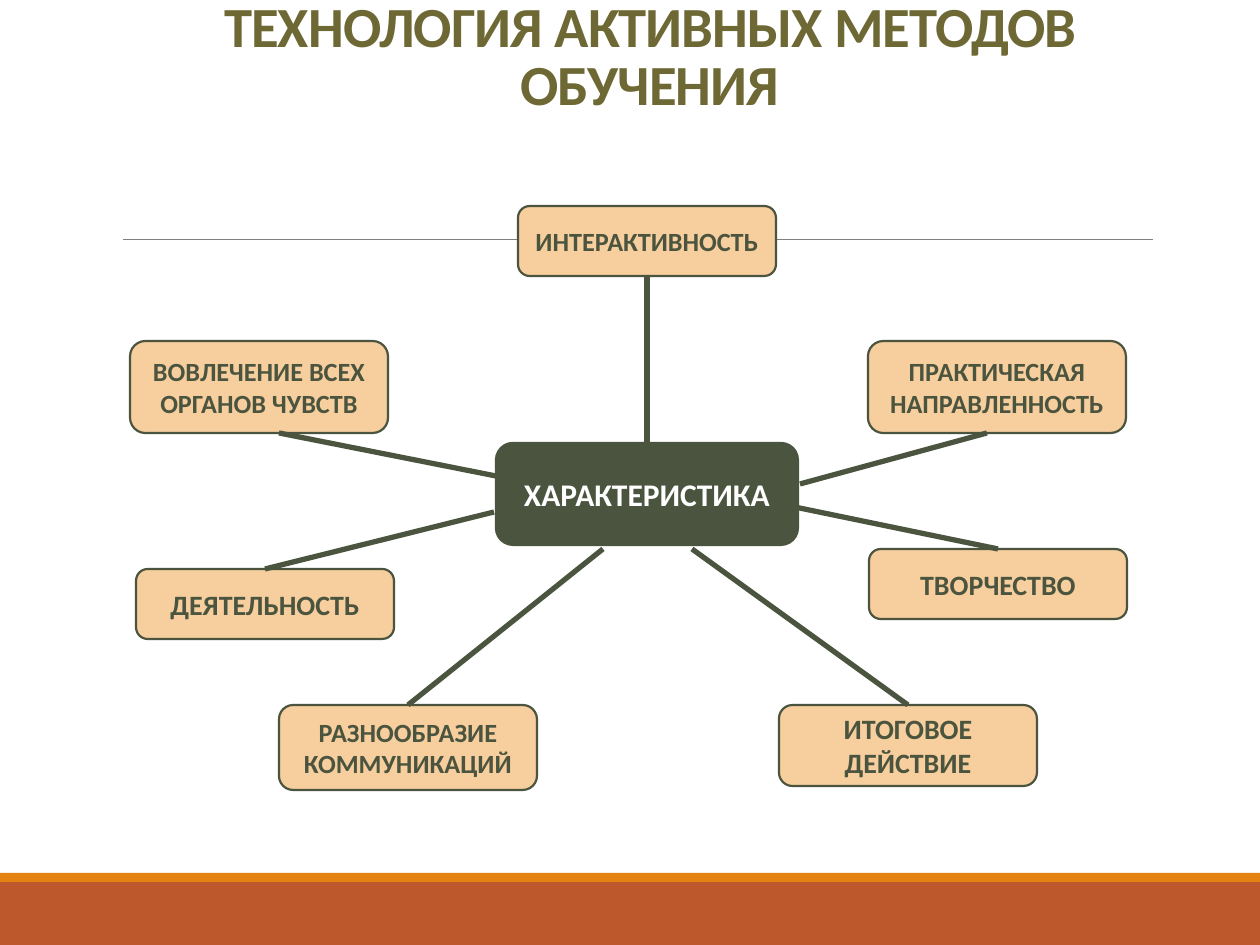
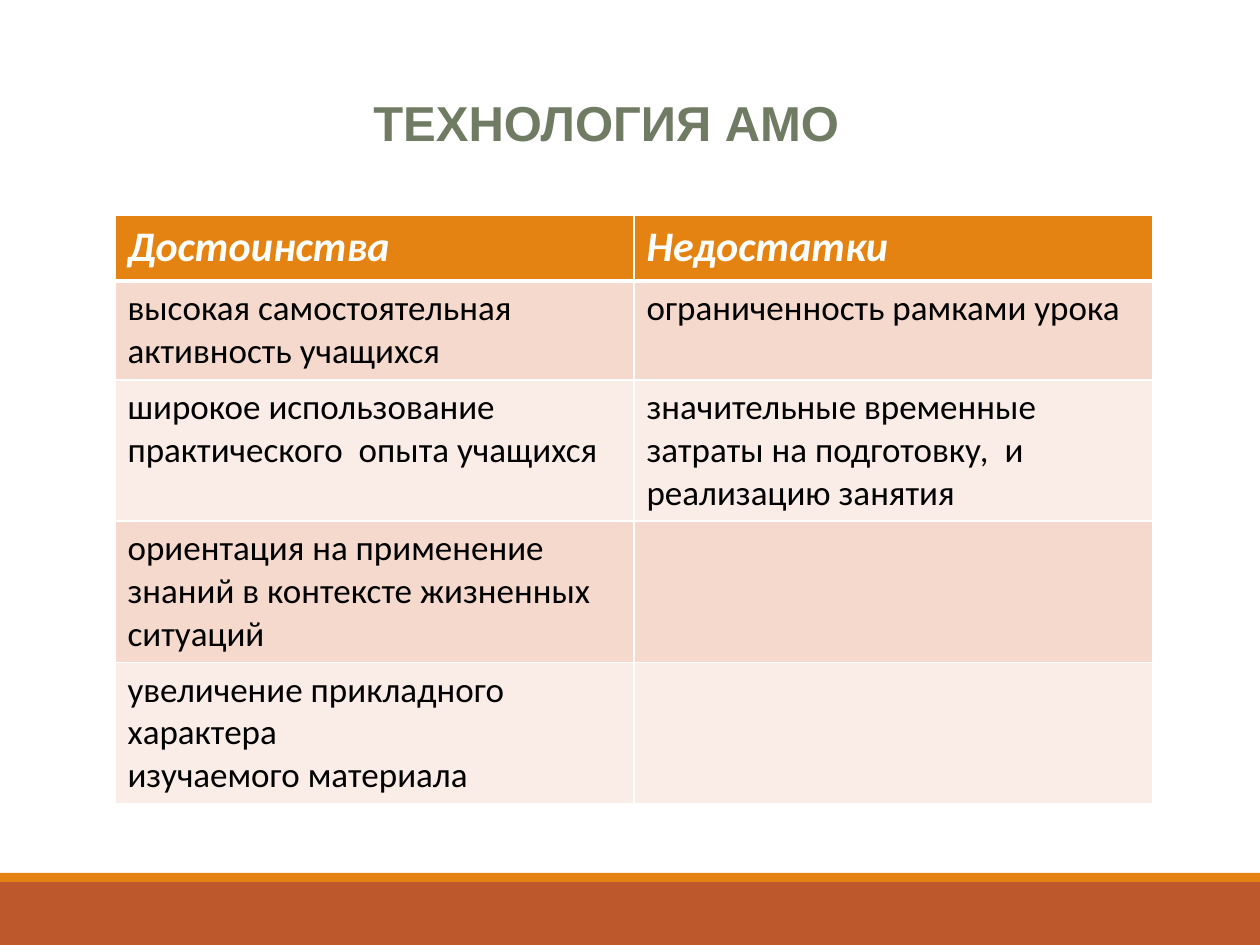
from lxml.etree import SubElement
from pptx import Presentation
from pptx.dml.color import RGBColor as RGB
from pptx.enum.shapes import MSO_CONNECTOR as CONN, MSO_SHAPE as SHAPE
from pptx.enum.text import MSO_ANCHOR as ANCHOR, PP_ALIGN as ALIGN
from pptx.oxml.ns import qn
from pptx.util import Inches, Pt

PX = Inches(1) // 126
C = {
    "rust": "BD582C", "orange": "E48312", "rule": "808080",
    "olive": "6D6834", "sage": "6F7B63", "green": "4A543E",
    "peach": "F7CE9D", "white": "FFFFFF", "black": "000000",
    "band_dark": "F5D9CC", "band_light": "FAEDE7",
}


def write(tf, text, size, color, font="Calibri", bold=False, italic=False,
          align=ALIGN.LEFT, anchor=ANCHOR.TOP, wrap=True, spacing=None, tracking=None):
    """Fill a text frame, one paragraph per line of text; tracking is in points."""
    tf.word_wrap = wrap
    tf.vertical_anchor = anchor
    tf.text = text
    for p in tf.paragraphs:
        p.alignment = align
        p.line_spacing = spacing
        for r in p.runs:
            r.font.name, r.font.size = font, Pt(size)
            r.font.bold, r.font.italic = bold, italic
            r.font.color.rgb = RGB.from_string(C[color])
            if tracking:
                r.font._element.set("spc", str(int(tracking * 100)))


def draw_line(s, x1, y1, x2, y2, color, width):
    ln = s.shapes.add_connector(CONN.STRAIGHT, x1 * PX, y1 * PX, x2 * PX, y2 * PX)
    ln.line.color.rgb = RGB.from_string(C[color])
    ln.line.width = Pt(width)
    SubElement(ln._element.spPr, qn("a:effectLst"))


prs = Presentation()
prs.slide_width, prs.slide_height = Inches(10), Inches(7.5)

# Shared footer bands and rule
for _ in range(2):
    s = prs.slides.add_slide(prs.slide_layouts[6])
    for top, height, color in [(882, 63, "rust"), (873, 9, "orange")]:
        sp = s.shapes.add_shape(SHAPE.RECTANGLE, 0, top * PX, prs.slide_width, height * PX)
        sp.shadow.inherit = False
        sp.fill.solid()
        sp.fill.fore_color.rgb = RGB.from_string(C[color])
        sp.line.fill.background()
    draw_line(s, 123, 239, 1153, 239, "rule", 0.5)
diagram, comparison = prs.slides

# Slide 1: characteristics around a centre
title = diagram.shapes.add_textbox(83 * PX, 0, 1134 * PX, 123 * PX)
write(title.text_frame, "ТЕХНОЛОГИЯ АКТИВНЫХ МЕТОДОВ ОБУЧЕНИЯ", 32.4, "olive", bold=True,
      align=ALIGN.CENTER, anchor=ANCHOR.BOTTOM, spacing=0.85, tracking=-0.5)

NODE_W = 258
nodes = [  # left, top, width, height, text, size, fill, text colour
    (496, 443, 302, 102, "ХАРАКТЕРИСТИКА", 18, "green", "white"),
    (130, 341, NODE_W, 92, "ВОВЛЕЧЕНИЕ ВСЕХ ОРГАНОВ ЧУВСТВ", 15, "peach", "green"),
    (518, 206, NODE_W, 70, "ИНТЕРАКТИВНОСТЬ", 15, "peach", "green"),
    (868, 341, NODE_W, 92, "ПРАКТИЧЕСКАЯ НАПРАВЛЕННОСТЬ", 15, "peach", "green"),
    (779, 705, NODE_W, 81, "ИТОГОВОЕ ДЕЙСТВИЕ", 16, "peach", "green"),
    (136, 569, NODE_W, 70, "ДЕЯТЕЛЬНОСТЬ", 16, "peach", "green"),
    (869, 549, NODE_W, 70, "ТВОРЧЕСТВО", 16, "peach", "green"),
    (279, 705, NODE_W, 85, "РАЗНООБРАЗИЕ КОММУНИКАЦИЙ", 15, "peach", "green"),
]
for left, top, width, height, text, size, fill, color in nodes:
    sp = diagram.shapes.add_shape(SHAPE.ROUNDED_RECTANGLE,
                                  left * PX, top * PX, width * PX, height * PX)
    sp.shadow.inherit = False
    sp.fill.solid()
    sp.fill.fore_color.rgb = RGB.from_string(C[fill])
    sp.line.color.rgb = RGB.from_string(C["green"])
    sp.line.width = Pt(1.25)
    write(sp.text_frame, text, size, color, bold=True,
          align=ALIGN.CENTER, anchor=ANCHOR.MIDDLE)

spokes = [
    (647, 275, 647, 443), (603, 549, 408, 705), (692, 549, 908, 705),
    (279, 433, 496, 476), (494, 512, 265, 569), (987, 433, 800, 484),
    (780, 504, 998, 549),
]
for ends in spokes:
    draw_line(diagram, *ends, "green", 3)

# Slide 2: advantages and drawbacks
rows = [
    ("Достоинства", "Недостатки"),
    ("высокая самостоятельная активность учащихся", "ограниченность рамками урока"),
    ("широкое использование практического  опыта учащихся",
     "значительные временные затраты на подготовку,  и реализацию занятия"),
    ("ориентация на применение знаний в контексте жизненных ситуаций", ""),
    ("увеличение прикладного характера\nизучаемого материала", ""),
]
row_heights = [66, 99, 141, 141, 141]
table = comparison.shapes.add_table(len(rows), 2, 115 * PX, 215 * PX,
                                    1038 * PX, sum(row_heights) * PX).table
for col in table.columns:
    col.width = 519 * PX
for i, (texts, height) in enumerate(zip(rows, row_heights)):
    table.rows[i].height = height * PX
    for j, text in enumerate(texts):
        cell = table.cell(i, j)
        tcPr = cell._tc.get_or_add_tcPr()
        for side in ("lnL", "lnR", "lnT", "lnB"):
            under_header = (i, side) in [(0, "lnB"), (1, "lnT")]
            ln = SubElement(tcPr, qn(f"a:{side}"), w=str(Pt(3 if under_header else 1)))
            SubElement(SubElement(ln, qn("a:solidFill")), qn("a:srgbClr"), val=C["white"])
        fill = "orange" if i == 0 else "band_dark" if i % 2 else "band_light"
        cell.fill.solid()
        cell.fill.fore_color.rgb = RGB.from_string(C[fill])
        if i == 0:
            write(cell.text_frame, text, 24, "white", bold=True, italic=True)
        else:
            write(cell.text_frame, text, 20, "black")

title = comparison.shapes.add_textbox(361 * PX, 86 * PX, 496 * PX, 72 * PX)
write(title.text_frame, "ТЕХНОЛОГИЯ АМО", 28, "sage", font="Arial", bold=True, wrap=False)

prs.save("out.pptx")
